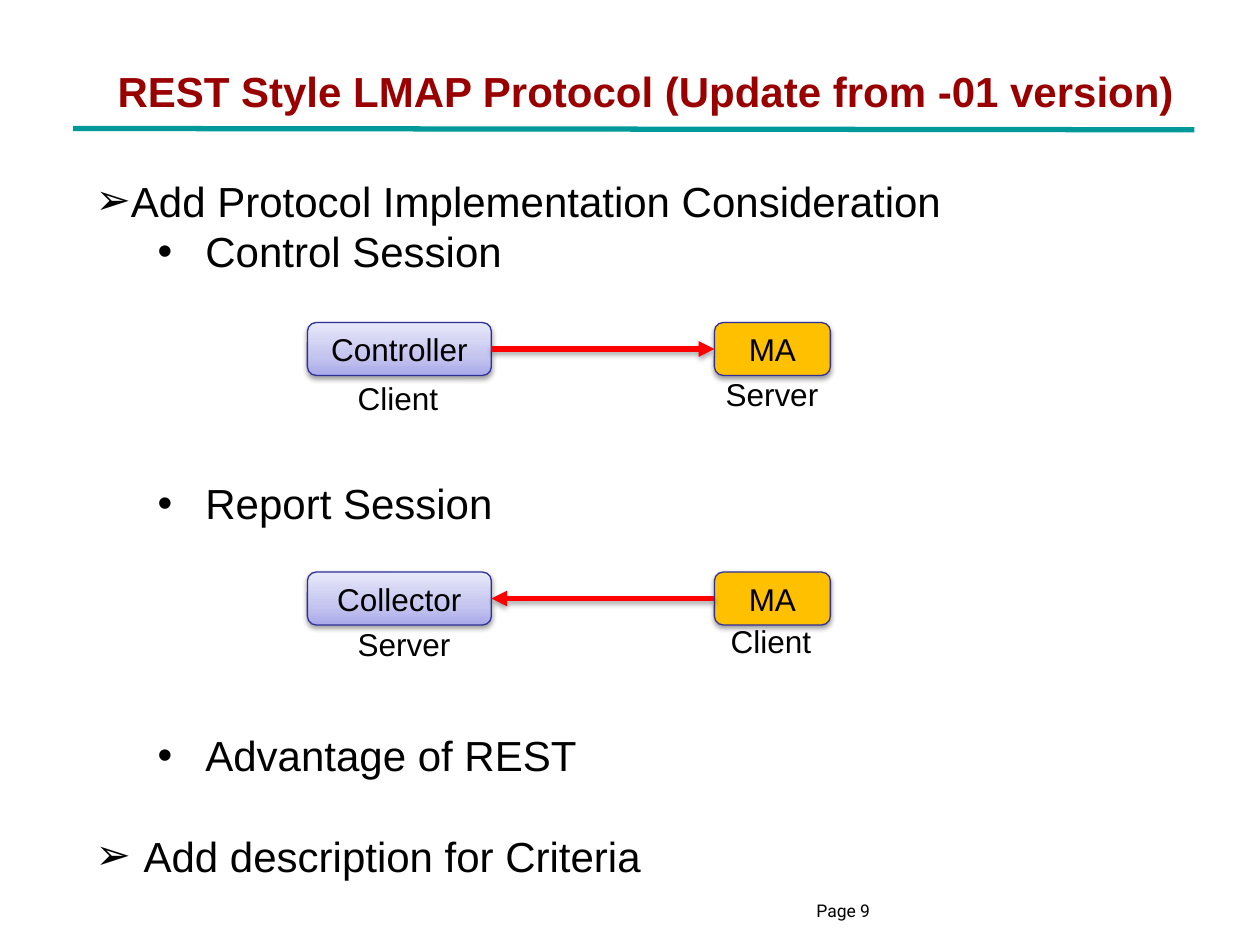
from lxml import etree
from pptx import Presentation
from pptx.dml.color import RGBColor
from pptx.enum.shapes import MSO_CONNECTOR, MSO_SHAPE
from pptx.enum.text import MSO_ANCHOR, MSO_AUTO_SIZE, PP_ALIGN
from pptx.oxml.ns import qn
from pptx.util import Inches, Pt

STRAIGHT = MSO_CONNECTOR.STRAIGHT
ROUNDED = MSO_SHAPE.ROUNDED_RECTANGLE
MIDDLE = MSO_ANCHOR.MIDDLE
FIT_SHAPE = MSO_AUTO_SIZE.SHAPE_TO_FIT_TEXT
LEFT, CENTER = PP_ALIGN.LEFT, PP_ALIGN.CENTER
LEFT_SIDE, RIGHT_SIDE = 1, 3

COLORS = {
    "text": "000000",
    "title": "990000",
    "rule": "009999",
    "agent": "FFC000",
    "border": "2F2F98",
    "arrow": "FF0000",
    "shadow": "000000",
}
PEER_GRADIENT = [(0, "A9A9E9"), (35, "C4C4EF"), (100, "E8E8FA")]
LINE_PITCH = 28.8


def rgb(name):
    return RGBColor.from_string(COLORS[name])


def add_xml(parent, tag, **attributes):
    return etree.SubElement(parent, qn(tag), {k: str(v) for k, v in attributes.items()})


def write(paragraph, text, size=18, color="text", bold=False, font="Arial", align=LEFT):
    paragraph.alignment = align
    run = paragraph.add_run()
    run.text = text
    run.font.name = font
    run.font.size = Pt(size)
    run.font.bold = bold
    run.font.color.rgb = rgb(color)


def add_shadow(shape, alpha, distance):
    """Cast a soft shadow straight down; alpha in percent, distance in points."""
    effects = add_xml(shape._element.spPr, "a:effectLst")
    shadow = add_xml(effects, "a:outerShdw", blurRad=Pt(3.1), dist=Pt(distance),
                     dir=90 * 60000, rotWithShape=0)
    color = add_xml(shadow, "a:srgbClr", val=COLORS["shadow"])
    add_xml(color, "a:alpha", val=alpha * 1000)


def set_gradient(shape, stops):
    """Fill from bottom to top with any number of stops."""
    shape.fill.gradient()
    gradient = shape._element.spPr.find(qn("a:gradFill"))
    stop_list = gradient.find(qn("a:gsLst"))
    for old_stop in list(stop_list):
        stop_list.remove(old_stop)
    for percent, color in stops:
        stop = add_xml(stop_list, "a:gs", pos=percent * 1000)
        add_xml(stop, "a:srgbClr", val=color)
    gradient.find(qn("a:lin")).set("ang", str(270 * 60000))


class SlideBuilder:
    """Holds the current slide and adds elements in its common style."""

    def __init__(self, slide):
        self.shapes = slide.shapes

    def text_frame(self, left, top, width, height, inset=(0.1, 0.05), wrap=True, fit=True):
        box = self.shapes.add_textbox(Inches(left), Inches(top), Inches(width), Inches(height))
        frame = box.text_frame
        frame.word_wrap = wrap
        if fit:
            frame.auto_size = FIT_SHAPE
        frame.margin_left = frame.margin_right = Inches(inset[0])
        frame.margin_top = frame.margin_bottom = Inches(inset[1])
        return frame

    def label(self, text, left, top, width):
        frame = self.text_frame(left, top, width, 0.4, wrap=False)
        write(frame.paragraphs[0], text)

    def outline(self, items):
        """Items are (text, level, bullet, left margin, indent, empty lines above)."""
        frame = self.text_frame(0.67, 1.35, 8.5, 5.74, inset=(0.09, 0.04))
        for number, (text, level, bullet, margin, indent, gap) in enumerate(items):
            paragraph = frame.add_paragraph() if number else frame.paragraphs[0]
            paragraph.level = level
            paragraph.line_spacing = Pt(LINE_PITCH)
            paragraph.space_before = Pt(gap * LINE_PITCH)
            write(paragraph, text, size=24)
            properties = paragraph._p.get_or_add_pPr()
            properties.set("marL", str(Inches(margin)))
            properties.set("indent", str(Inches(indent)))
            add_xml(properties, "a:buFont", typeface="Arial")
            add_xml(properties, "a:buChar", char=bullet)

    def node(self, text, left, top, width, fill=None):
        """Add a role box; without a plain fill it gets the peer gradient."""
        box = self.shapes.add_shape(ROUNDED, Inches(left), Inches(top),
                                    Inches(width), Inches(0.42))
        if fill:
            box.fill.solid()
            box.fill.fore_color.rgb = rgb(fill)
        else:
            set_gradient(box, PEER_GRADIENT)
        box.line.color.rgb = rgb("border")
        box.line.width = Pt(0.75)
        add_shadow(box, alpha=38, distance=1.6)
        box.text_frame.vertical_anchor = MIDDLE
        box.text_frame.word_wrap = True
        write(box.text_frame.paragraphs[0], text, align=CENTER)
        return box

    def line(self, start, end, color):
        line = self.shapes.add_connector(STRAIGHT, *map(Inches, start + end))
        line.line.color.rgb = rgb(color)
        line.line.width = Pt(3)
        return line

    def request(self, client, client_side, server, server_side):
        arrow = self.line((0, 0), (1, 0), "arrow")
        arrow.begin_connect(client, client_side)
        arrow.end_connect(server, server_side)
        add_xml(arrow.line._get_or_add_ln(), "a:tailEnd", type="triangle")
        add_shadow(arrow, alpha=35, distance=1.8)


def main():
    presentation = Presentation()
    presentation.slide_width, presentation.slide_height = Inches(10), Inches(7.5)
    page = SlideBuilder(presentation.slides.add_slide(presentation.slide_layouts[6]))

    page_number = page.text_frame(6.48, 7.17, 1.16, 0.3, inset=(0, 0), fit=False).paragraphs[0]
    page_number.line_spacing = 0.85
    write(page_number, "Page 9", size=10, font="Roboto")

    rule = page.line((0.58, 1.02), (9.48, 1.03), "rule")
    add_xml(rule._element.spPr, "a:effectLst")
    title = page.text_frame(-0.33, 0.47, 10.91, 0.51)
    write(title.paragraphs[0], "REST Style LMAP Protocol (Update from -01 version)",
          size=24, color="title", bold=True, align=CENTER)

    page.outline([
        ("Add Protocol Implementation Consideration", 0, "➢", 0, 0, 0),
        ("Control Session", 1, "•", 0.87, -0.38, 0),
        ("Report Session", 1, "•", 0.87, -0.38, 4),
        ("Advantage of REST", 1, "•", 0.87, -0.38, 4),
        ("Add description for Criteria", 0, "➢", 0.38, -0.38, 1),
    ])

    sessions = [("Controller", 2.56, True), ("Collector", 4.54, False)]
    for peer_name, top, peer_is_client in sessions:
        agent = page.node("MA", 5.67, top, 0.92, fill="agent")
        peer = page.node(peer_name, 2.44, top, 1.46)
        ends = [(peer, RIGHT_SIDE), (agent, LEFT_SIDE)]
        client, server = ends if peer_is_client else reversed(ends)
        page.request(*client, *server)

    for role, left, top, width in [
        ("Client", 2.74, 2.96, 0.85),
        ("Server", 5.66, 2.93, 0.95),
        ("Client", 5.7, 4.89, 0.85),
        ("Server", 2.74, 4.91, 0.95),
    ]:
        page.label(role, left, top, width)

    presentation.save("out.pptx")


if __name__ == "__main__":
    main()
